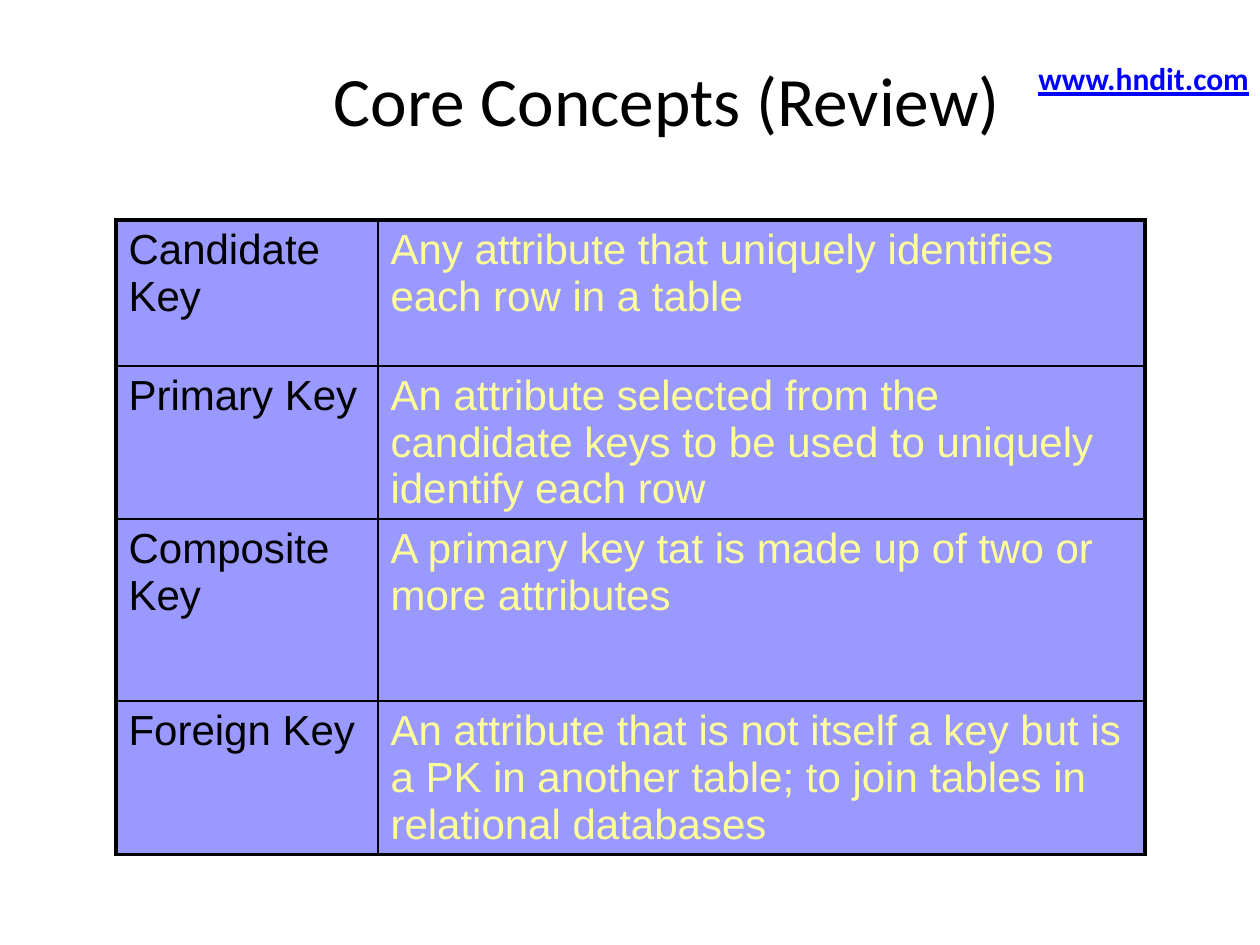
from dataclasses import dataclass

from lxml import etree
from pptx import Presentation
from pptx.dml.color import RGBColor
from pptx.enum.text import MSO_ANCHOR, MSO_AUTO_SIZE, PP_ALIGN
from pptx.oxml.ns import qn
from pptx.table import _Cell
from pptx.text.text import TextFrame
from pptx.util import Emu, Pt

PIXELS_PER_INCH = 126
BLACK = RGBColor(0x00, 0x00, 0x00)
BLUE = RGBColor(0x00, 0x00, 0xFF)
LAVENDER = RGBColor(0x99, 0x99, 0xFF)
PALE_YELLOW = RGBColor(0xFF, 0xFF, 0x99)
LEFT, CENTER = PP_ALIGN.LEFT, PP_ALIGN.CENTER
TOP, MIDDLE = MSO_ANCHOR.TOP, MSO_ANCHOR.MIDDLE
NO_AUTOFIT, GROW = MSO_AUTO_SIZE.NONE, MSO_AUTO_SIZE.SHAPE_TO_FIT_TEXT
TITLE_ONLY = 5
INNER_BORDER, OUTER_BORDER = Pt(1), Pt(2.25)
COLUMN_WIDTHS = (262, 767)


@dataclass(frozen=True)
class KeyRow:
    term: str
    definition: str
    height: int


KEY_ROWS = (
    KeyRow("Candidate Key", "Any attribute that uniquely identifies each row in a table", 146),
    KeyRow(
        "Primary Key",
        "An attribute selected from the candidate keys to be used to uniquely identify each row",
        153,
    ),
    KeyRow("Composite Key", "A primary key tat is made up of two or more attributes", 182),
    KeyRow(
        "Foreign Key",
        "An attribute that is not itself a key but is a PK in another table; "
        "to join tables in relational databases",
        153,
    ),
)


def px(length: int) -> Emu:
    return Emu(round(length * 914400 / PIXELS_PER_INCH))


def write_text(
    text_frame: TextFrame,
    text: str,
    *,
    size: float,
    font_name: str,
    color: RGBColor,
    bold: bool = False,
    underline: bool = False,
    align: PP_ALIGN = LEFT,
) -> None:
    paragraph = text_frame.paragraphs[0]
    paragraph.alignment = align
    run = paragraph.add_run()
    run.text = text
    run.font.size = Pt(size)
    run.font.name = font_name
    run.font.color.rgb = color
    run.font.bold = bold
    run.font.underline = underline


def add_borders(cell: _Cell, widths: dict[str, Emu]) -> None:
    properties = cell._tc.get_or_add_tcPr()
    for position, (side, width) in enumerate(widths.items()):
        line = etree.Element(qn(f"a:ln{side}"), w=str(int(width)))
        fill = etree.SubElement(line, qn("a:solidFill"))
        etree.SubElement(fill, qn("a:srgbClr"), val=str(BLACK))
        properties.insert(position, line)


def add_title(slide) -> None:
    title = slide.shapes.title
    title.left, title.top, title.width, title.height = px(231), px(50), px(872), px(97)
    title.text_frame.auto_size = NO_AUTOFIT
    title.text_frame.vertical_anchor = MIDDLE
    write_text(
        title.text_frame, "Core Concepts (Review)",
        size=39.6, font_name="Calibri", color=BLACK, align=CENTER,
    )


def add_key_table(slide) -> None:
    total_height = sum(row.height for row in KEY_ROWS)
    frame = slide.shapes.add_table(
        len(KEY_ROWS), len(COLUMN_WIDTHS),
        px(116), px(220), px(sum(COLUMN_WIDTHS)), px(total_height),
    )
    table = frame.table
    table.first_row = False
    table.horz_banding = False
    for column, width in zip(table.columns, COLUMN_WIDTHS):
        column.width = px(width)
    last_row, last_column = len(KEY_ROWS) - 1, len(COLUMN_WIDTHS) - 1
    for row_index, key_row in enumerate(KEY_ROWS):
        table.rows[row_index].height = px(key_row.height)
        contents = ((key_row.term, BLACK), (key_row.definition, PALE_YELLOW))
        for column_index, (text, color) in enumerate(contents):
            cell = table.cell(row_index, column_index)
            cell.fill.solid()
            cell.fill.fore_color.rgb = LAVENDER
            cell.vertical_anchor = TOP
            write_text(cell.text_frame, text, size=24, font_name="Arial", color=color)
            outer_sides = {
                "L": column_index == 0,
                "R": column_index == last_column,
                "T": row_index == 0,
                "B": row_index == last_row,
            }
            add_borders(cell, {
                side: OUTER_BORDER if outer else INNER_BORDER
                for side, outer in outer_sides.items()
            })


def add_web_address(slide) -> None:
    box = slide.shapes.add_textbox(px(1026), px(53), px(237), px(50))
    box.text_frame.word_wrap = False
    box.text_frame.auto_size = GROW
    write_text(
        box.text_frame, "www.hndit.com",
        size=18, font_name="Calibri", color=BLUE, bold=True, underline=True,
    )


def main() -> None:
    presentation = Presentation()
    presentation.slide_width, presentation.slide_height = px(1260), px(945)
    slide = presentation.slides.add_slide(presentation.slide_layouts[TITLE_ONLY])
    add_title(slide)
    add_key_table(slide)
    add_web_address(slide)
    presentation.save("out.pptx")


if __name__ == "__main__":
    main()
